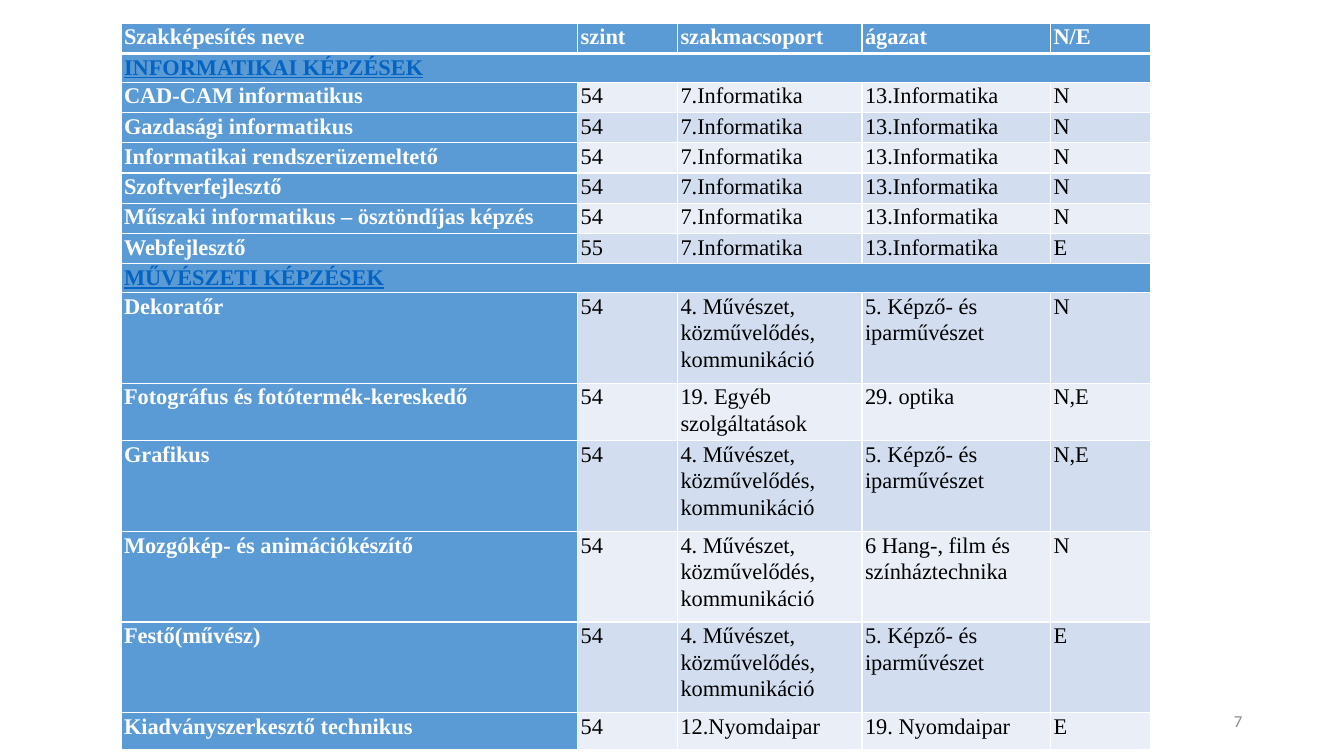
from dataclasses import dataclass

from lxml.etree import SubElement
from pptx import Presentation
from pptx.dml.color import RGBColor as Color
from pptx.enum.text import MSO_ANCHOR as Anchor, PP_ALIGN as Align
from pptx.oxml.ns import qn
from pptx.util import Inches, Pt


@dataclass(frozen=True)
class Theme:
    """Colours, fonts and sizes of the slide."""
    blue: str = "5B9BD5"
    bands: tuple = ("EAEFF7", "D2DEEF")
    white: str = "FFFFFF"
    black: str = "000000"
    link: str = "0563C1"
    grey: str = "8C8C8C"
    table_font: str = "Times New Roman"
    number_font: str = "Calibri"
    table_size: int = 16
    number_size: int = 12
    spacing: float = 1.07
    thin: int = 1
    thick: int = 3


THEME = Theme()
COLUMN_WIDTHS = (4.53, 0.99, 1.83, 1.87, 0.99)
HEADER = ("Szakképesítés neve", "szint", "szakmacsoport", "ágazat", "N/E")
COMPUTING = ("7.Informatika", "13.Informatika")
ARTS = "4. Művészet, közművelődés, kommunikáció"
FINE_ARTS = (ARTS, "5. Képző- és iparművészet")
ROWS = (
    (0.3, HEADER),
    (0.15, ("INFORMATIKAI KÉPZÉSEK",)),
    (0.3, ("CAD-CAM informatikus", "54", *COMPUTING, "N")),
    (0.3, ("Gazdasági informatikus", "54", *COMPUTING, "N")),
    (0.3, ("Informatikai rendszerüzemeltető", "54", *COMPUTING, "N")),
    (0.3, ("Szoftverfejlesztő", "54", *COMPUTING, "N")),
    (0.3, ("Műszaki informatikus – ösztöndíjas képzés", "54", *COMPUTING, "N")),
    (0.3, ("Webfejlesztő", "55", *COMPUTING, "E")),
    (0.15, ("MŰVÉSZETI KÉPZÉSEK",)),
    (0.9, ("Dekoratőr", "54", *FINE_ARTS, "N")),
    (0.55, ("Fotográfus és fotótermék-kereskedő", "54",
            "19. Egyéb szolgáltatások", "29. optika", "N,E")),
    (0.9, ("Grafikus", "54", *FINE_ARTS, "N,E")),
    (0.9, ("Mozgókép- és animációkészítő", "54", ARTS,
           "6 Hang-, film és színháztechnika", "N")),
    (0.9, ("Festő(művész)", "54", *FINE_ARTS, "E")),
    (0.37, ("Kiadványszerkesztő technikus", "54", "12.Nyomdaipar",
            "19. Nyomdaipar", "E")),
)


def set_all(target, **values):
    """Set each named attribute of the target."""
    for name, value in values.items():
        setattr(target, name, value)


def write(para, text, color, **font):
    """Add one formatted run to a paragraph."""
    span = para.add_run()
    span.text = text
    set_all(span.font, **font)
    span.font.color.rgb = Color.from_string(color)


def add_borders(cell, top, bottom):
    """Draw white borders around a cell."""
    properties = cell._tc.get_or_add_tcPr()
    widths = {"lnL": THEME.thin, "lnR": THEME.thin, "lnT": top, "lnB": bottom}
    for side, width in widths.items():
        line = SubElement(properties, qn(f"a:{side}"), w=str(Pt(width)))
        fill = SubElement(line, qn("a:solidFill"))
        SubElement(fill, qn("a:srgbClr"), val=THEME.white)


def format_cell(cell, text, row, column, section):
    """Fill a cell with text styled by its place in the table."""
    strong = row == 0 or column == 0 or section
    add_borders(cell, THEME.thick if row == 1 else THEME.thin,
                THEME.thick if row == 0 else THEME.thin)
    cell.fill.solid()
    background = THEME.blue if strong else THEME.bands[row % 2]
    cell.fill.fore_color.rgb = Color.from_string(background)
    set_all(cell, margin_left=Inches(0.03), margin_right=Inches(0.03),
            margin_top=0, margin_bottom=0, vertical_anchor=Anchor.TOP)
    color = THEME.link if section else THEME.white if strong else THEME.black
    para = cell.text_frame.paragraphs[0]
    para.line_spacing = THEME.spacing
    write(para, text, color, name=THEME.table_font, size=Pt(THEME.table_size),
          bold=strong, underline=section)


def add_course_table(page):
    """Add the table of qualifications."""
    frame = page.shapes.add_table(len(ROWS), len(HEADER), Inches(1.2), Inches(0.23),
                                  Inches(sum(COLUMN_WIDTHS)),
                                  Inches(sum(height for height, _ in ROWS)))
    table = frame.table
    set_all(table, first_row=True, first_col=True, horz_banding=True)
    for column, width in zip(table.columns, COLUMN_WIDTHS):
        column.width = Inches(width)
    for row, (height, texts) in enumerate(ROWS):
        table.rows[row].height = Inches(height)
        section = len(texts) == 1
        for column in range(len(HEADER)):
            text = texts[column] if column < len(texts) else ""
            format_cell(table.cell(row, column), text, row, column, section)
        if section:
            table.cell(row, 0).merge(table.cell(row, len(HEADER) - 1))
    last_group = table.cell(len(ROWS) - 1, 2).text_frame.paragraphs[0]
    set_all(last_group, line_spacing=Pt(18.8), space_before=Pt(2))


def add_page_number(page, number):
    """Add the page number at the lower right."""
    box = page.shapes.add_textbox(Inches(9.42), Inches(6.95), Inches(3), Inches(0.4))
    set_all(box.text_frame, word_wrap=True, vertical_anchor=Anchor.MIDDLE)
    para = box.text_frame.paragraphs[0]
    para.alignment = Align.RIGHT
    write(para, number, THEME.grey, name=THEME.number_font, size=Pt(THEME.number_size))


def main():
    """Build and save the slide."""
    deck = Presentation()
    set_all(deck, slide_width=Inches(13.33), slide_height=Inches(7.5))
    page = deck.slides.add_slide(deck.slide_layouts[6])
    add_page_number(page, "7")
    add_course_table(page)
    deck.save("out.pptx")


if __name__ == "__main__":
    main()
